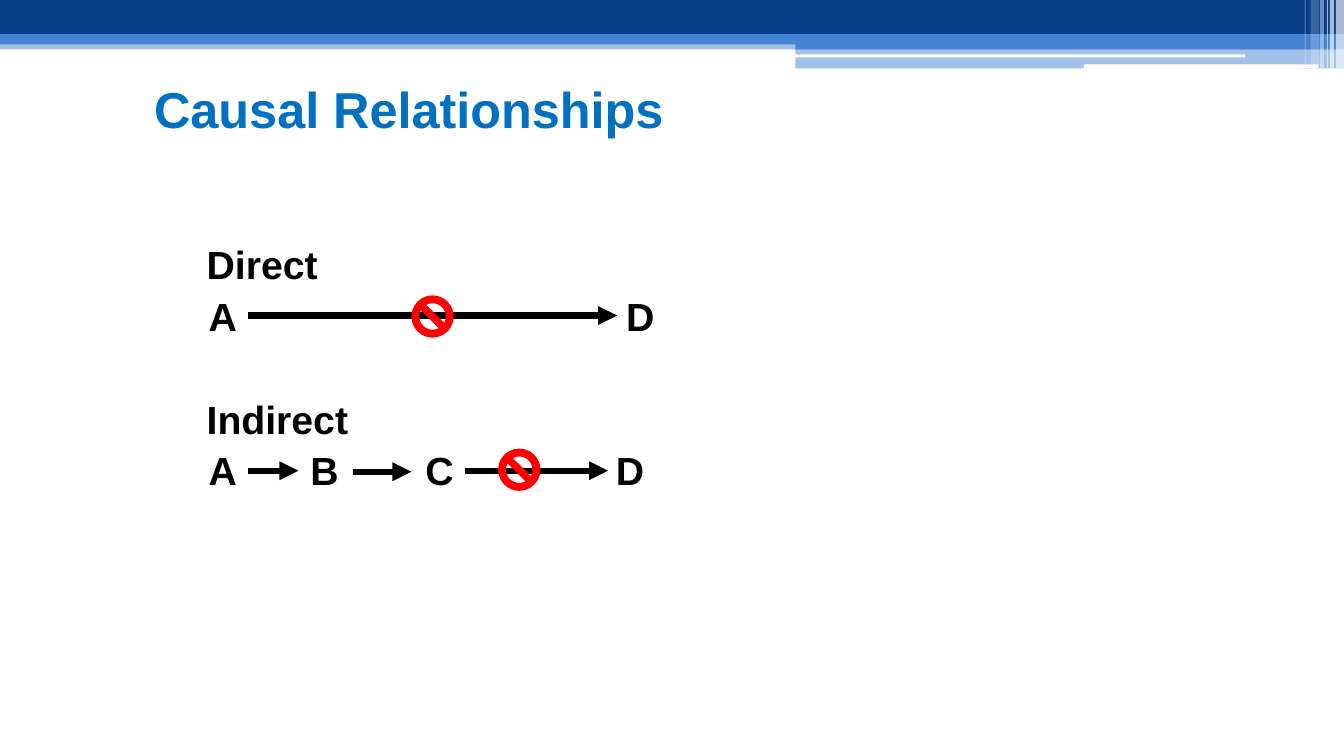
"""Build the Causal Relationships slide."""
import pptx
import pptx.util
import pptx.dml.color
import pptx.enum.shapes
import pptx.enum.text
import pptx.oxml.ns
from lxml import etree

Inches = pptx.util.Inches
SHAPES = pptx.enum.shapes.MSO_SHAPE
COLORS = {"navy": "073E87", "blue": "4584D3", "white": "FFFFFF",
          "title": "0070C0", "black": "000000", "red": "FF0000"}

TITLE = ("Causal Relationships", 1.43, 0.49, 9, 1.17)
BANDS = [
    (0, 0.4, 13.33, 0.09, "blue", 50),
    (0, 0, 13.33, 0.34, "navy", 100),
    (0, 0.34, 13.33, 0.1, "blue", 100),
    (7.89, 0.39, 5.44, 0.1, "blue", 100),
    (7.89, 0.48, 5.44, 0.2, "blue", 50),
]
HIGHLIGHTS = [(7.88, 0.54, 4.47, 0.03), (10.75, 0.64, 2.33, 0.04)]
STRIPES = [
    (13.25, 0, 0.08, 0.68, "white", 65),
    (13.19, 0, 0.04, 0.68, "white", 65),
    (13.16, 0, 0.01, 0.68, "white", 60),
    (13.09, 0, 0.04, 0.68, "white", 40),
    (13, 0, 0.08, 0.64, "white", 20),
    (12.94, 0, 0.01, 0.64, "white", 30),
]
CHAINS = [
    {"heading": "Direct", "row": 0,
     "nodes": [("A", 2.07), ("D", 6.21)],
     "arrows": [(2.46, 6.12, 3.13)], "block": (4.08, 2.93)},
    {"heading": "Indirect", "row": 3,
     "nodes": [("A", 2.07), ("B", 3.08), ("C", 4.22), ("D", 6.11)],
     "arrows": [(2.46, 2.96, 4.67), (3.5, 4.08, 4.68), (4.61, 6.03, 4.67)],
     "block": (4.94, 4.45)},
]
HEADING_LEFT, FIRST_ROW, ROW_STEP, ROW_HEIGHT = 2.05, 2.62, 0.51, 0.45
BLOCK_SIZE = 0.42


def rgb(name):
    return pptx.dml.color.RGBColor.from_string(COLORS[name])


def add_filled(slide, kind, left, top, width, height, color, opacity=100):
    shape = slide.shapes.add_shape(kind, *map(Inches, (left, top, width, height)))
    shape.shadow.inherit = False
    shape.line.fill.background()
    shape.fill.solid()
    shape.fill.fore_color.rgb = rgb(color)
    if opacity < 100:
        tint = shape.fill._xPr.find(".//" + pptx.oxml.ns.qn("a:srgbClr"))
        etree.SubElement(tint, pptx.oxml.ns.qn("a:alpha"), val=str(opacity * 1000))


def add_text(slide, text, left, top, width, height, size, color, inset=0):
    frame = slide.shapes.add_textbox(*map(Inches, (left, top, width, height))).text_frame
    frame.word_wrap = True
    frame.vertical_anchor = pptx.enum.text.MSO_ANCHOR.MIDDLE
    frame.margin_left = frame.margin_right = Inches(inset)
    frame.margin_top = frame.margin_bottom = 0
    paragraph = frame.paragraphs[0]
    paragraph.text = text
    paragraph.font.name = "Arial"
    paragraph.font.size = pptx.util.Pt(size)
    paragraph.font.bold = True
    paragraph.font.color.rgb = rgb(color)


def add_arrow(slide, start, end, y):
    arrow = slide.shapes.add_connector(
        pptx.enum.shapes.MSO_CONNECTOR.STRAIGHT, *map(Inches, (start, y, end, y)))
    arrow.line.color.rgb = rgb("black")
    arrow.line.width = pptx.util.Pt(4.5)
    etree.SubElement(arrow.line._get_or_add_ln(),
                     pptx.oxml.ns.qn("a:tailEnd"), type="triangle")
    etree.SubElement(arrow._element.spPr, pptx.oxml.ns.qn("a:effectLst"))


def add_chain(slide, chain):
    heading_top = FIRST_ROW + chain["row"] * ROW_STEP - ROW_HEIGHT / 2
    add_text(slide, chain["heading"], HEADING_LEFT, heading_top, 3, ROW_HEIGHT, 28, "black")
    for node, left in chain["nodes"]:
        add_text(slide, node, left, heading_top + ROW_STEP, 0.4, ROW_HEIGHT, 28, "black")
    for arrow in chain["arrows"]:
        add_arrow(slide, *arrow)
    add_filled(slide, SHAPES.NO_SYMBOL, *chain["block"], BLOCK_SIZE, BLOCK_SIZE, "red")


def main():
    deck = pptx.Presentation()
    deck.slide_width, deck.slide_height = Inches(13.33), Inches(7.5)
    slide = deck.slides.add_slide(deck.slide_layouts[6])
    for band in BANDS:
        add_filled(slide, SHAPES.RECTANGLE, *band)
    for highlight in HIGHLIGHTS:
        add_filled(slide, SHAPES.ROUNDED_RECTANGLE, *highlight, "white")
    for stripe in STRIPES:
        add_filled(slide, SHAPES.RECTANGLE, *stripe)
    add_text(slide, *TITLE, 36, "title", inset=0.1)
    for chain in CHAINS:
        add_chain(slide, chain)
    deck.save("out.pptx")


if __name__ == "__main__":
    main()
